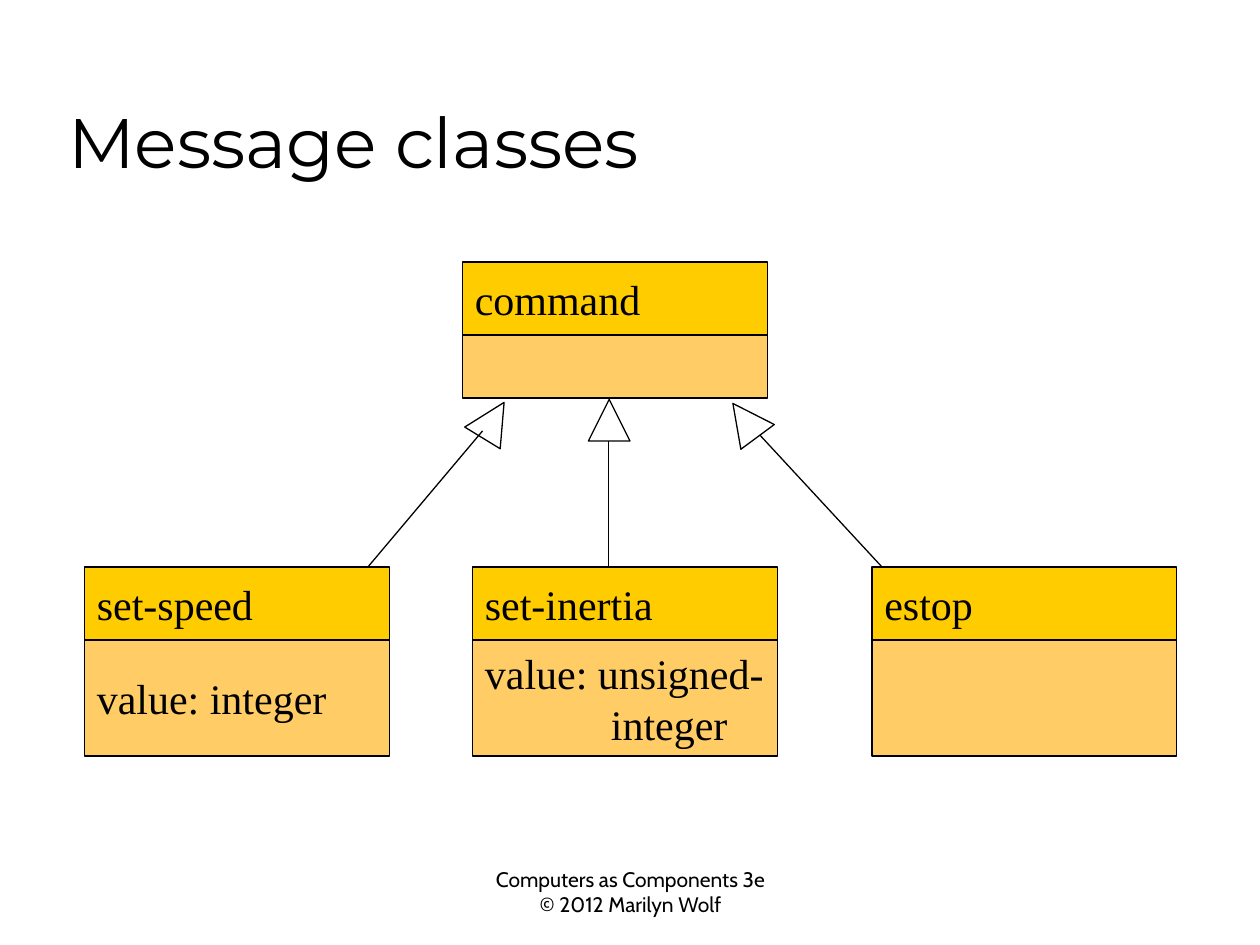
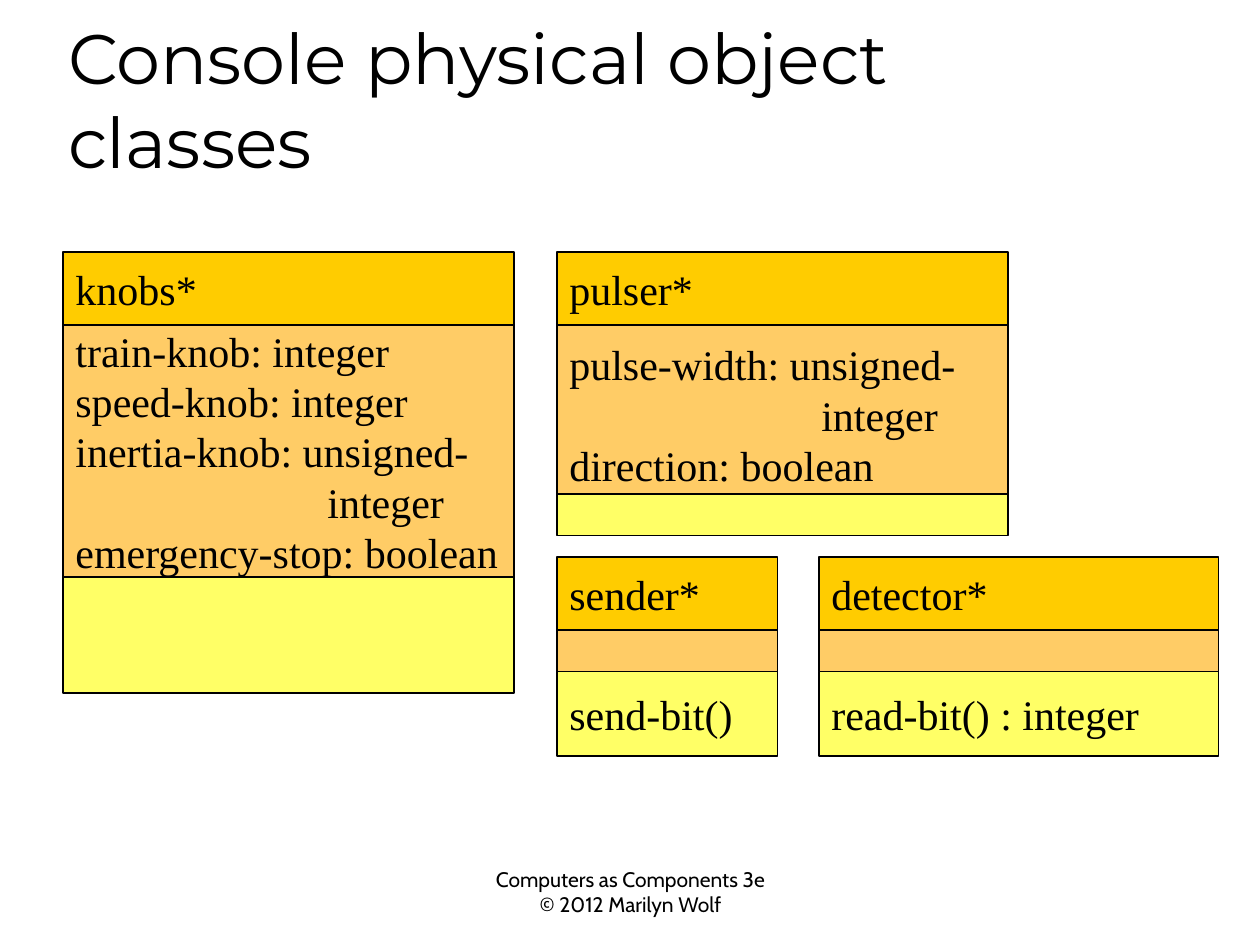
import pptx
import pptx.util
import pptx.dml.color
import pptx.enum.shapes
import pptx.enum.text
import pptx.oxml.ns
import lxml.etree

Inches = pptx.util.Inches
Pt = pptx.util.Pt
SHAPE = pptx.enum.shapes.MSO_SHAPE
ANCHOR = pptx.enum.text.MSO_ANCHOR
ALIGN = pptx.enum.text.PP_ALIGN

INK = "000000"
PAPER = "FFFFFF"
TIERS = ["FFCC00", "FFCC66", "FFFF66"]  # class name, attributes, methods
HEAD = 0.58
FOOT = ["Computers as Components 3e", "© 2012 Marilyn Wolf"]


def paint(fmt, color):
    """Give a fill or font a solid colour from a hex string."""
    if hasattr(fmt, "solid"):
        fmt.solid()
        fmt = fmt.fore_color
    else:
        fmt = fmt.color
    fmt.rgb = pptx.dml.color.RGBColor.from_string(color)


def style(par, font, size):
    par.font.name = font
    par.font.size = Pt(size)
    paint(par.font, INK)


def write(frame, lines, font, size, align=ALIGN.LEFT):
    """Write one paragraph a line; a (text, indent) pair is indented in inches."""
    for i, line in enumerate(lines):
        text, indent = line if isinstance(line, tuple) else (line, 0)
        par = frame.paragraphs[0] if i == 0 else frame.add_paragraph()
        par.text = text
        par.alignment = align
        if indent:
            par._p.get_or_add_pPr().set("marL", str(Inches(indent)))
        style(par, font, size)


def shape(slide, kind, left, top, width, height, color):
    item = slide.shapes.add_shape(
        kind, Inches(left), Inches(top), Inches(width), Inches(height))
    item.shadow.inherit = False
    paint(item.fill, color)
    paint(item.line.fill, INK)
    item.line.width = Pt(0.75)
    return item


def link(slide, start, end):
    line = slide.shapes.add_connector(
        pptx.enum.shapes.MSO_CONNECTOR.STRAIGHT,
        *(Inches(n) for n in start + end))
    paint(line.line.fill, INK)
    line.line.width = Pt(0.75)
    lxml.etree.SubElement(
        line._element.spPr, pptx.oxml.ns.qn("a:effectLst"))


def tip(slide, left, angle=0):
    """Draw a hollow inheritance arrowhead below the parent class."""
    head = shape(slide, SHAPE.ISOSCELES_TRIANGLE, left, 3.17, 0.33, 0.33, PAPER)
    head.rotation = angle


def card(slide, left, top, width, name, *parts, lap=0):
    """Stack a class name and its (height, lines) parts; lap covers the
    bottom of the attributes with the methods."""
    rows = [(HEAD, [name]), *parts]
    for rank, ((height, lines), color) in enumerate(zip(rows, TIERS)):
        box = shape(slide, SHAPE.RECTANGLE, left, top, width, height, color)
        if lines:
            frame = box.text_frame
            frame.word_wrap = True
            frame.margin_right = 0
            frame.vertical_anchor = ANCHOR.MIDDLE
            write(frame, lines, "Times New Roman", 24)
        top += height - (lap if rank == 1 else 0)


def base(deck, title):
    """Add a slide with the shared title and footer."""
    slide = deck.slides.add_slide(deck.slide_layouts[5])
    paint(slide.background.fill, PAPER)
    foot = slide.shapes.add_textbox(
        Inches(3.67), Inches(6.83), Inches(2.67), Inches(0.5)).text_frame
    foot.word_wrap = True
    write(foot, FOOT, "Cabin", 12, ALIGN.CENTER)
    head = slide.shapes.title
    head.left, head.top = Inches(0.44), Inches(0.25)
    head.width, head.height = Inches(8.5), Inches(1.25)
    frame = head.text_frame
    frame.auto_size = pptx.enum.text.MSO_AUTO_SIZE.NONE
    frame.vertical_anchor = ANCHOR.BOTTOM
    write(frame, [title], "Montserrat", 40)
    return slide


def messages(deck):
    slide = base(deck, "Message classes")
    card(slide, 3.67, 2.08, 2.42, "command", (0.5, []))
    kids = [
        (0.67, "set-speed", ["value: integer"]),
        (3.75, "set-inertia", ["value: unsigned-", ("integer", 1)]),
        (6.92, "estop", []),
    ]
    for left, name, lines in kids:
        card(slide, left, 4.5, 2.42, name, (0.92, lines))
    tip(slide, 4.67)
    tip(slide, 3.75, 31.4)
    for start, end in [((3.83, 3.42), (2.92, 4.5)),
                       ((4.83, 3.5), (4.83, 4.5)),
                       ((6, 3.42), (7, 4.5))]:
        link(slide, start, end)
    tip(slide, 5.75, 323.5)


def console(deck):
    slide = base(deck, "Console physical object classes")
    knobs = ["train-knob: integer", "speed-knob: integer",
             "inertia-knob: unsigned-", ("integer", 2),
             "emergency-stop: boolean"]
    pulse = ["pulse-width: unsigned-", ("integer", 2), "direction: boolean"]
    card(slide, 0.5, 2, 3.58, "knobs*", (2, knobs), (0.92, []))
    card(slide, 4.42, 2, 3.58, "pulser*", (1.42, pulse), (0.33, []), lap=0.08)
    for left, width, name, call in [
            (4.42, 1.75, "sender*", "send-bit()"),
            (6.5, 3.17, "detector*", "read-bit() : integer")]:
        card(slide, left, 4.42, width, name, (0.33, []), (0.67, [call]))


def main():
    deck = pptx.Presentation()
    deck.slide_width, deck.slide_height = Inches(10), Inches(7.5)
    messages(deck)
    console(deck)
    deck.save("out.pptx")


if __name__ == "__main__":
    main()
